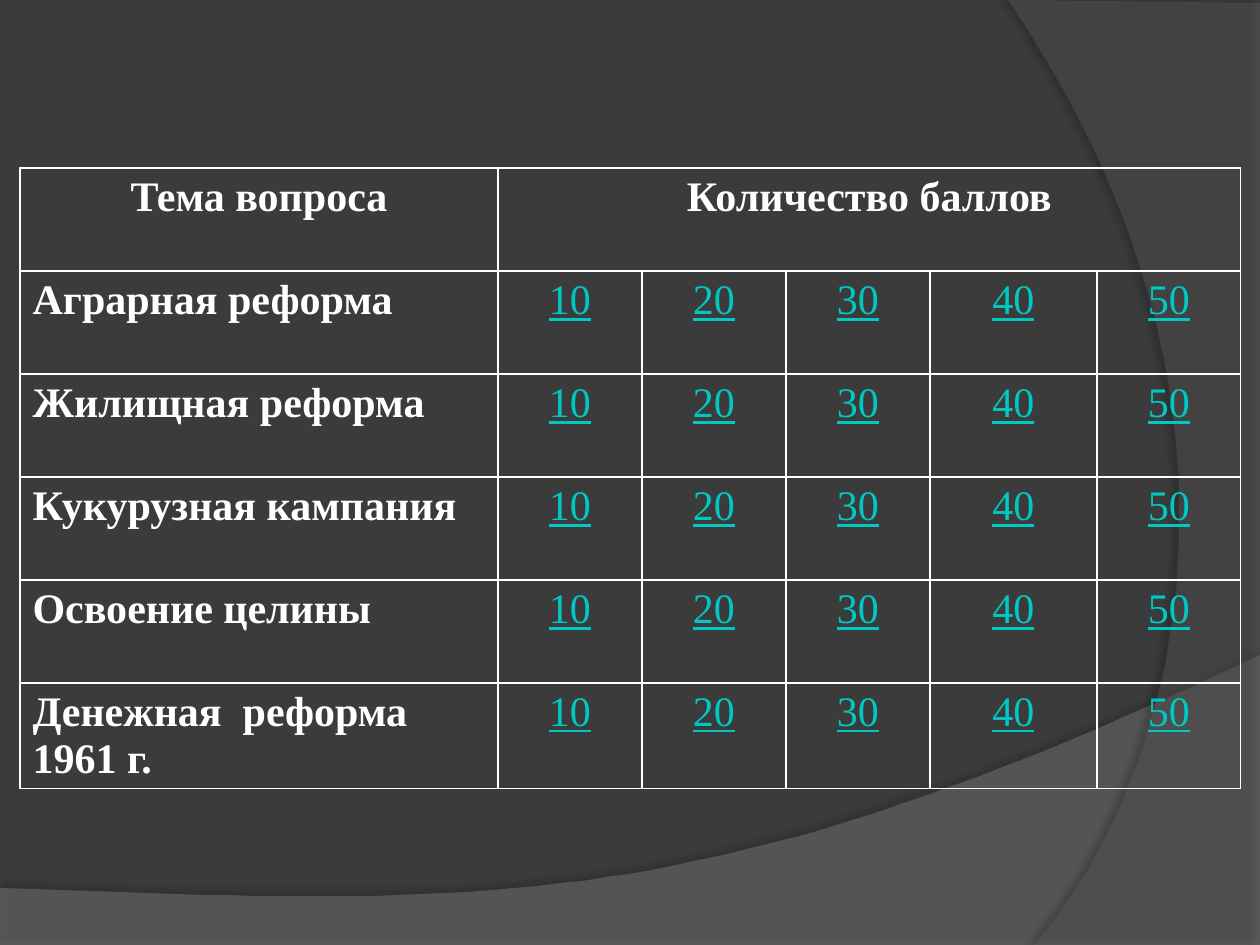
from lxml import etree
from pptx import Presentation
from pptx.dml.color import RGBColor
from pptx.enum.text import PP_ALIGN
from pptx.oxml.ns import qn
from pptx.util import Emu, Pt

SCALE = 914400 / 126
CENTER, LEFT = PP_ALIGN.CENTER, PP_ALIGN.LEFT
FONT = "Times New Roman"
BACKGROUND, WHITE, TEAL = "3B3B3B", "FFFFFF", "00C8C3"
TOPICS = [
    "Аграрная реформа",
    "Жилищная реформа",
    "Кукурузная кампания",
    "Освоение целины",
    "Денежная  реформа 1961 г.",
]
POINTS = ["10", "20", "30", "40", "50"]
COLUMN_WIDTHS = [478, 144, 144, 144, 167, 144]
ROW_HEIGHT = 103


def px(length):
    """Turn pixels into EMU."""
    return Emu(round(length * SCALE))


def color(value):
    """Turn a hex string into a colour."""
    return RGBColor.from_string(value)


def add_xml(parent, tag, **attributes):
    """Append a drawing element to a parent and return it."""
    attributes = {name: str(value) for name, value in attributes.items()}
    return etree.SubElement(parent, qn(tag), attributes)


def curve_points(start, control_1, control_2, end, steps=48):
    """Return points along a cubic curve, without its start."""
    points = []
    for step in range(1, steps + 1):
        t = step / steps
        weights = ((1 - t) ** 3, 3 * t * (1 - t) ** 2, 3 * t * t * (1 - t), t ** 3)
        knots = (start, control_1, control_2, end)
        points.append(tuple(
            sum(weight * knot[axis] for weight, knot in zip(weights, knots))
            for axis in (0, 1)
        ))
    return points


def add_shadow(shape, opacity, blur, distance, angle):
    """Give a shape a soft black shadow."""
    shape.shadow.inherit = False
    effects = shape._element.spPr.find(qn("a:effectLst"))
    shadow = add_xml(effects, "a:outerShdw", blurRad=Pt(blur), dist=Pt(distance),
                     dir=angle * 60000, algn="ctr", rotWithShape=0)
    black = add_xml(shadow, "a:srgbClr", val="000000")
    add_xml(black, "a:alpha", val=opacity * 1000)


def add_wave(slide, corners, controls, end, fill, opacity, shadow):
    """Draw a translucent area with one curved edge."""
    outline = corners + curve_points(corners[-1], *controls, end)
    builder = slide.shapes.build_freeform(*outline[0], scale=SCALE)
    builder.add_line_segments(outline[1:], close=True)
    shape = builder.convert_to_shape()
    shape.fill.solid()
    shape.fill.fore_color.rgb = color(fill)
    tint = shape._element.spPr.find(qn("a:solidFill"))[0]
    add_xml(tint, "a:alpha", val=opacity * 1000)
    shape.line.fill.background()
    add_shadow(shape, *shadow)


def add_borders(cell):
    """Draw a thin white line on each side of a cell."""
    properties = cell._tc.get_or_add_tcPr()
    for index, side in enumerate(("a:lnL", "a:lnR", "a:lnT", "a:lnB")):
        line = add_xml(properties, side, w=Pt(1))
        add_xml(add_xml(line, "a:solidFill"), "a:srgbClr", val=WHITE)
        properties.insert(index, line)


def write_cell(cell, text, alignment=CENTER, is_score=False):
    """Write a bold label or an underlined score in a cell."""
    paragraph = cell.text_frame.paragraphs[0]
    paragraph.alignment = alignment
    run = paragraph.add_run()
    run.text = text
    run.font.name = FONT
    run.font.size = Pt(24)
    run.font.bold = not is_score
    run.font.underline = is_score
    run.font.color.rgb = color(TEAL if is_score else WHITE)


def add_score_table(slide):
    """Build the table of topics and scores."""
    row_count = len(TOPICS) + 1
    table = slide.shapes.add_table(
        row_count, len(COLUMN_WIDTHS), px(20), px(168),
        px(sum(COLUMN_WIDTHS)), px(ROW_HEIGHT * row_count),
    ).table
    table.first_row = table.horz_banding = False
    for column, width in zip(table.columns, COLUMN_WIDTHS):
        column.width = px(width)
    for row in table.rows:
        row.height = px(ROW_HEIGHT)
    for cell in table.iter_cells():
        cell.fill.background()
        add_borders(cell)
    table.cell(0, 1).merge(table.cell(0, len(POINTS)))
    write_cell(table.cell(0, 0), "Тема вопроса")
    write_cell(table.cell(0, 1), "Количество баллов")
    for row, topic in enumerate(TOPICS, 1):
        write_cell(table.cell(row, 0), topic, LEFT)
        for column, score in enumerate(POINTS, 1):
            write_cell(table.cell(row, column), score, is_score=True)


def main():
    """Build and save the slide."""
    presentation = Presentation()
    presentation.slide_width, presentation.slide_height = px(1260), px(945)
    slide = presentation.slides.add_slide(presentation.slide_layouts[6])
    slide.background.fill.solid()
    slide.background.fill.fore_color.rgb = color(BACKGROUND)
    add_wave(slide, [(0, 888), (0, 946), (1260, 946), (1260, 655)],
             [(704, 919), (493, 906)], (0, 888), "7F7F7F", 45, (35, 4, 3.5, 270))
    add_wave(slide, [(1260, 3), (1260, 945), (1034, 945)],
             [(1178, 780), (1283, 402)], (1008, 0), "5E5E5E", 40, (45, 4, 4, 180))
    add_score_table(slide)
    presentation.save("out.pptx")


if __name__ == "__main__":
    main()
